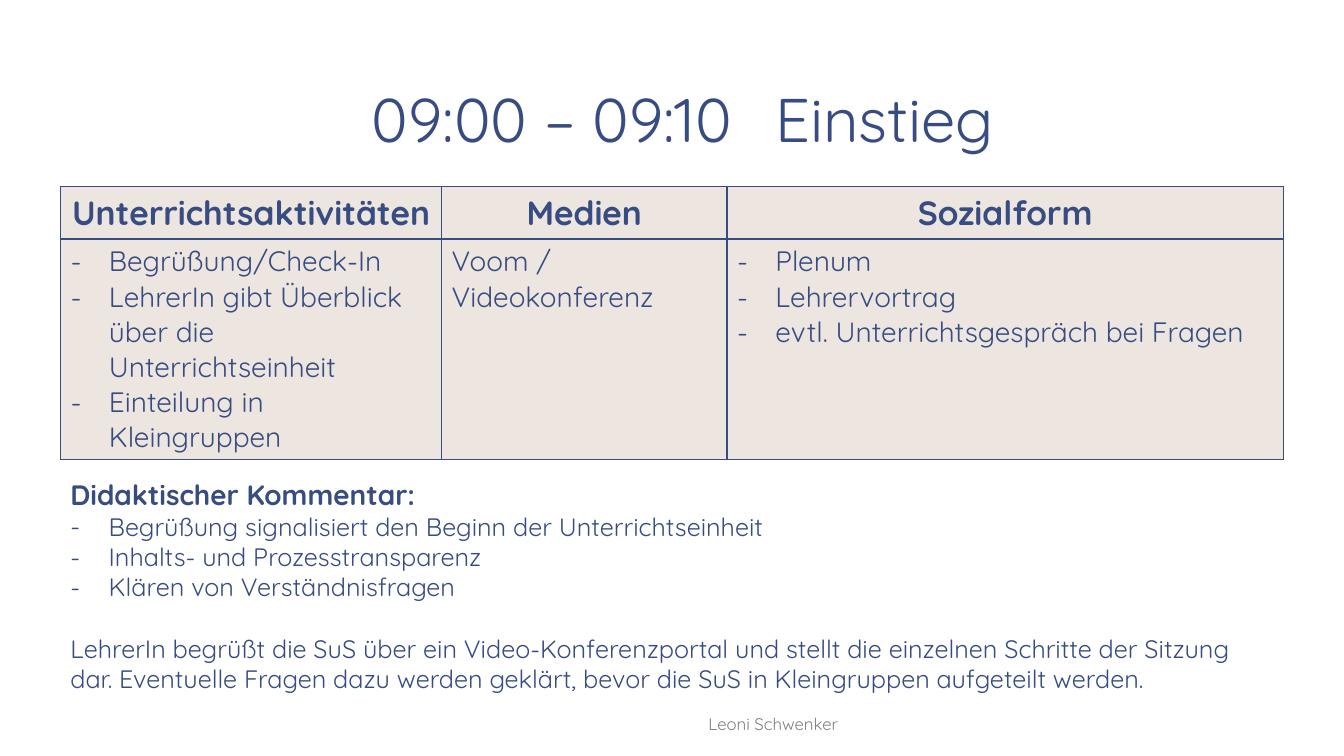
from lxml import etree
from pptx import Presentation
from pptx.dml.color import RGBColor
from pptx.enum import text as t
from pptx.oxml.ns import qn
from pptx.util import Inches, Pt

FONT = "Quicksand"
COLORS = {"navy": "374C81", "sand": "EDE5DF", "grey": "808080"}

TITLE = "09:00 – 09:10\tEinstieg"
AUTHOR = "Leoni Schwenker"
# Each column: heading, width, entries, entries are a dashed list
COLUMNS = [
    ("Unterrichtsaktivitäten", 3.78, [
        "Begrüßung/Check-In",
        "LehrerIn gibt Überblick über die Unterrichtseinheit",
        "Einteilung in Kleingruppen",
    ], True),
    ("Medien", 2.83, ["Voom / Videokonferenz"], False),
    ("Sozialform", 5.52, [
        "Plenum",
        "Lehrervortrag",
        "evtl. Unterrichtsgespräch bei Fragen",
    ], True),
]
ROW_HEIGHTS = [0.52, 2.19]
COMMENT_HEADING = "Didaktischer Kommentar:"
COMMENT_POINTS = [
    "Begrüßung signalisiert den Beginn der Unterrichtseinheit",
    "Inhalts- und Prozesstransparenz",
    "Klären von Verständnisfragen",
]
COMMENT_TEXT = (
    "LehrerIn begrüßt die SuS über ein Video-Konferenzportal und stellt die "
    "einzelnen Schritte der Sitzung dar. Eventuelle Fragen dazu werden geklärt, "
    "bevor die SuS in Kleingruppen aufgeteilt werden."
)
LEFT, WIDTH = 0.6, 12.13


def write(frame, lines, size, color="navy", bold=False, centred=False, dashed=False):
    """Append lines to a text frame, using its empty first paragraph if there is one."""
    for line in lines:
        first = frame.paragraphs[0]
        paragraph = frame.add_paragraph() if first.runs else first
        paragraph.add_run().text = line
        if centred:
            paragraph.alignment = t.PP_ALIGN.CENTER
        if dashed:
            properties = paragraph._p.get_or_add_pPr()
            properties.set("marL", str(Inches(0.38)))
            properties.set("indent", str(-Inches(0.38)))
            etree.SubElement(properties, qn("a:buFont"), typeface=FONT)
            etree.SubElement(properties, qn("a:buChar"), char="-")
        font = paragraph.font
        font.name, font.size, font.bold = FONT, Pt(size), bold
        font.color.rgb = RGBColor.from_string(COLORS[color])
    return paragraph


def add_box(slide, left, top, width, height):
    box = slide.shapes.add_textbox(*map(Inches, (left, top, width, height)))
    box.text_frame.word_wrap = True
    return box.text_frame


def add_bottom_line(slide, place, line, size, color):
    """Add one centred line standing on the bottom of its box."""
    frame = add_box(slide, *place)
    frame.vertical_anchor = t.MSO_ANCHOR.BOTTOM
    frame.margin_left = frame.margin_right = Inches(0.13)
    frame.margin_top = frame.margin_bottom = Inches(0.07)
    return write(frame, [line], size, color, centred=True)


def style_cell(cell, **widths):
    """Give the cell its fill and borders; widths in points by side L, R, T, B."""
    properties = cell._tc.get_or_add_tcPr()
    for side, width in widths.items():
        border = etree.SubElement(properties, qn(f"a:ln{side}"), w=str(Pt(width)))
        fill = etree.SubElement(border, qn("a:solidFill"))
        etree.SubElement(fill, qn("a:srgbClr"), val=COLORS["navy"])
    cell.fill.solid()
    cell.fill.fore_color.rgb = RGBColor.from_string(COLORS["sand"])


def add_schedule(slide):
    table = slide.shapes.add_table(
        len(ROW_HEIGHTS), len(COLUMNS), Inches(LEFT), Inches(1.85),
        Inches(WIDTH), Inches(sum(ROW_HEIGHTS))).table
    for row, height in zip(table.rows, ROW_HEIGHTS):
        row.height = Inches(height)
    for index, (heading, width, entries, dashed) in enumerate(COLUMNS):
        table.columns[index].width = Inches(width)
        head, body = table.cell(0, index), table.cell(1, index)
        style_cell(head, L=1, R=1, T=1, B=2)
        style_cell(body, L=1, R=1, T=2, B=1)
        write(head.text_frame, [heading], 24, bold=True, centred=True)
        write(body.text_frame, entries, 20, dashed=dashed)


def add_comment(slide):
    frame = add_box(slide, LEFT, 4.69, WIDTH, 2.56)
    frame.auto_size = t.MSO_AUTO_SIZE.SHAPE_TO_FIT_TEXT
    write(frame, [COMMENT_HEADING], 20, bold=True)
    write(frame, COMMENT_POINTS, 18, dashed=True)
    write(frame, [COMMENT_TEXT], 18).space_before = Pt(22)


def main():
    deck = Presentation()
    deck.slide_width, deck.slide_height = Inches(13.33), Inches(7.5)
    slide = deck.slides.add_slide(deck.slide_layouts[6])
    title = add_bottom_line(slide, (1.22, 0.08, 11.11, 1.53), TITLE, 44, "navy")
    title.line_spacing = 0.85
    add_schedule(slide)
    add_comment(slide)
    add_bottom_line(slide, (4.27, 7, 6.8, 0.35), AUTHOR, 12, "grey")
    deck.save("out.pptx")


if __name__ == "__main__":
    main()
